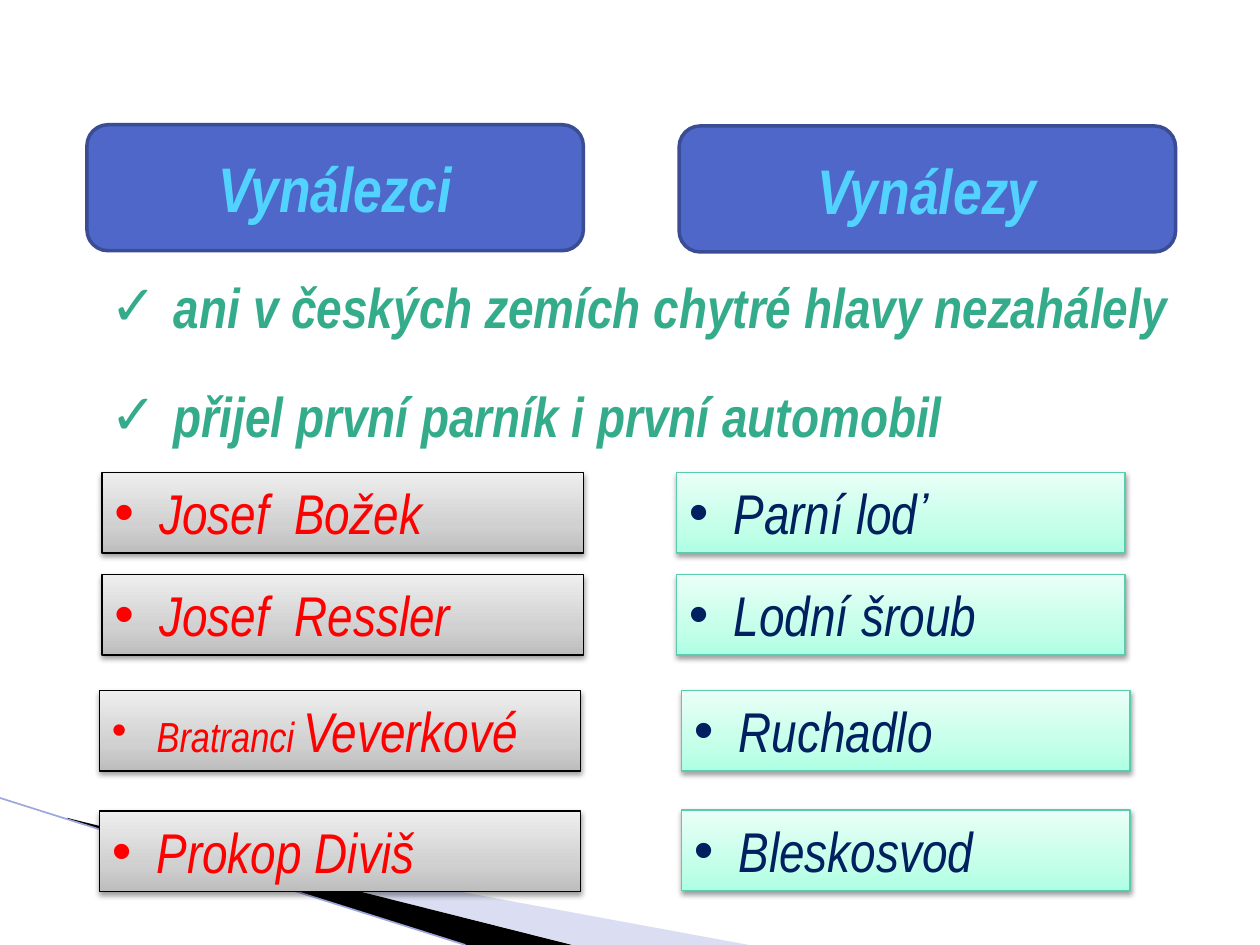
from lxml.etree import SubElement
from pptx import Presentation
from pptx.dml.color import RGBColor
from pptx.enum.shapes import MSO_CONNECTOR, MSO_SHAPE
from pptx.enum.text import MSO_ANCHOR, MSO_AUTO_SIZE, PP_ALIGN
from pptx.oxml import parse_xml
from pptx.oxml.ns import nsdecls, qn
from pptx.util import Pt

THEME = {
    "font": "Arial Narrow",
    "heading": 36, "text": 32, "small": 24,
    "head_fill": "4E67C8", "head_line": "3A4C94", "head_text": "52D2FF",
    "check": "34AC8B", "swoosh_line": "9EA7DD",
}
INVENTOR = {"grad": ("BDBDBD", "D1D1D1", "EEEEEE"), "line": "000000",
            "color": "FF0000", "width": 275}
INVENTION = {"grad": ("AEFFE3", "C5FFEA", "E9FFF7"), "line": "58CCAC",
             "color": "002060", "width": 256.3}

HEADINGS = [("Vynálezci", 49.7, 71.3), ("Vynálezy", 388.1, 72)]
CHECKS = ["ani v českých zemích chytré hlavy nezahálely",
          "přijel první parník i první automobil"]
SMALL, TEXT = THEME["small"], THEME["text"]
# Each card: left, top, runs of (text, size)
INVENTORS = [
    (58.3, 270, [("Josef  Božek", TEXT)]),
    (58.3, 328.3, [("Josef  Ressler", TEXT)]),
    (56.9, 394.6, [("Bratranci ", SMALL), ("Veverkové", TEXT)]),
    (56.9, 463.5, [("Prokop Diviš", TEXT)]),
]
INVENTIONS = [
    (386.6, 270, [("Parní loď", TEXT)]),
    (386.6, 328.3, [("Lodní šroub", TEXT)]),
    (389.5, 394.6, [("Ruchadlo", TEXT)]),
    (389.5, 462.8, [("Bleskosvod", TEXT)]),
]
# Each swoosh: fill, opacity in percent, outline
SWOOSHES = [
    ("A6AEE1", 40, [(39.6, 468.4), (428, 540), (328, 540), (39.6, 468)]),
    ("000000", 100, [(38.2, 467.3), (327, 540), (266, 540), (38.9, 468)]),
]
CARD_HEIGHT = 46


def rgb(value):
    return RGBColor.from_string(value)


def add_text(p, text, size, color, bold=False):
    r = p.add_run()
    r.text = text
    f = r.font
    f.name, f.size, f.bold, f.italic = THEME["font"], Pt(size), bold, True
    f.color.rgb = rgb(color)


def add_bullet(p, char, indent):
    pPr = p._p.get_or_add_pPr()
    pPr.set("marL", str(Pt(indent)))
    pPr.set("indent", str(-Pt(indent)))
    SubElement(pPr, qn("a:buFont")).set("typeface", "Arial")
    SubElement(pPr, qn("a:buChar")).set("char", char)


def set_gradient(sp, colors):
    """Fill upwards with three colours at 0, 35 and 100 percent."""
    stops = "".join(f'<a:gs pos="{pos}"><a:srgbClr val="{c}"/></a:gs>'
                    for pos, c in zip((0, 35000, 100000), colors))
    sp.fill.background()
    spPr = sp._element.spPr
    spPr.replace(spPr.find(qn("a:noFill")), parse_xml(
        f'<a:gradFill {nsdecls("a")} rotWithShape="1"><a:gsLst>{stops}</a:gsLst>'
        '<a:lin ang="16200000" scaled="0"/></a:gradFill>'))


def set_shadow(sp):
    sp.shadow.inherit = False
    sp._element.spPr.find(qn("a:effectLst")).append(parse_xml(
        f'<a:outerShdw {nsdecls("a")} blurRad="{Pt(3.1)}" dist="{Pt(1.6)}" '
        'dir="5400000" rotWithShape="0"><a:srgbClr val="000000">'
        '<a:alpha val="38000"/></a:srgbClr></a:outerShdw>'))


def add_swoosh(s, color, opacity, points):
    points = [(Pt(x), Pt(y)) for x, y in points]
    builder = s.shapes.build_freeform(*points[0], scale=1.0)
    builder.add_line_segments(points[1:], close=True)
    sp = builder.convert_to_shape()
    sp.shadow.inherit = False
    sp.fill.solid()
    sp.fill.fore_color.rgb = rgb(color)
    sp.line.fill.background()
    if opacity < 100:
        clr = sp._element.spPr.find(f'{qn("a:solidFill")}/{qn("a:srgbClr")}')
        SubElement(clr, qn("a:alpha")).set("val", str(opacity * 1000))


def add_heading(s, text, left, top):
    sp = s.shapes.add_shape(MSO_SHAPE.ROUNDED_RECTANGLE,
                            Pt(left), Pt(top), Pt(283.7), Pt(72))
    sp.shadow.inherit = False
    sp.fill.solid()
    sp.fill.fore_color.rgb = rgb(THEME["head_fill"])
    sp.line.color.rgb = rgb(THEME["head_line"])
    sp.line.width = Pt(2)
    sp.text_frame.vertical_anchor = MSO_ANCHOR.MIDDLE
    p = sp.text_frame.paragraphs[0]
    p.alignment = PP_ALIGN.CENTER
    add_text(p, text, THEME["heading"], THEME["head_text"], bold=True)


def add_card(s, left, top, runs, style):
    sp = s.shapes.add_shape(MSO_SHAPE.RECTANGLE, Pt(left), Pt(top),
                            Pt(style["width"]), Pt(CARD_HEIGHT))
    set_gradient(sp, style["grad"])
    sp.line.color.rgb = rgb(style["line"])
    sp.line.width = Pt(0.75)
    set_shadow(sp)
    sp.text_frame.vertical_anchor = MSO_ANCHOR.TOP
    p = sp.text_frame.paragraphs[0]
    add_bullet(p, "•", 25.5)
    p.alignment = PP_ALIGN.LEFT
    for text, size in runs:
        add_text(p, text, size, style["color"])


def fill_checks(body):
    body.left, body.top, body.width, body.height = Pt(56.2), Pt(152), Pt(640), Pt(107)
    tf = body.text_frame
    tf.word_wrap = True
    tf.auto_size = MSO_AUTO_SIZE.NONE
    tf.vertical_anchor = MSO_ANCHOR.TOP
    for i, text in enumerate(CHECKS):
        p = tf.add_paragraph() if i else tf.paragraphs[0]
        add_bullet(p, "✓", 36)
        p.space_before = Pt(24 if i else 0)
        add_text(p, text, TEXT, THEME["check"], bold=True)


def main():
    prs = Presentation()
    prs.slide_width, prs.slide_height = Pt(720), Pt(540)
    s = prs.slides.add_slide(prs.slide_layouts[1])
    title = s.shapes.title._element
    title.getparent().remove(title)
    fill_checks(s.placeholders[1])

    for swoosh in SWOOSHES:
        add_swoosh(s, *swoosh)
    edge = s.shapes.add_connector(MSO_CONNECTOR.STRAIGHT,
                                  Pt(0), Pt(456), Pt(266), Pt(540))
    edge.line.color.rgb = rgb(THEME["swoosh_line"])
    edge.line.width = Pt(0.95)
    SubElement(edge._element.spPr, qn("a:effectLst"))

    for heading in HEADINGS:
        add_heading(s, *heading)
    for cards, style in ((INVENTORS, INVENTOR), (INVENTIONS, INVENTION)):
        for card in cards:
            add_card(s, *card, style)
    prs.save("out.pptx")


if __name__ == "__main__":
    main()
